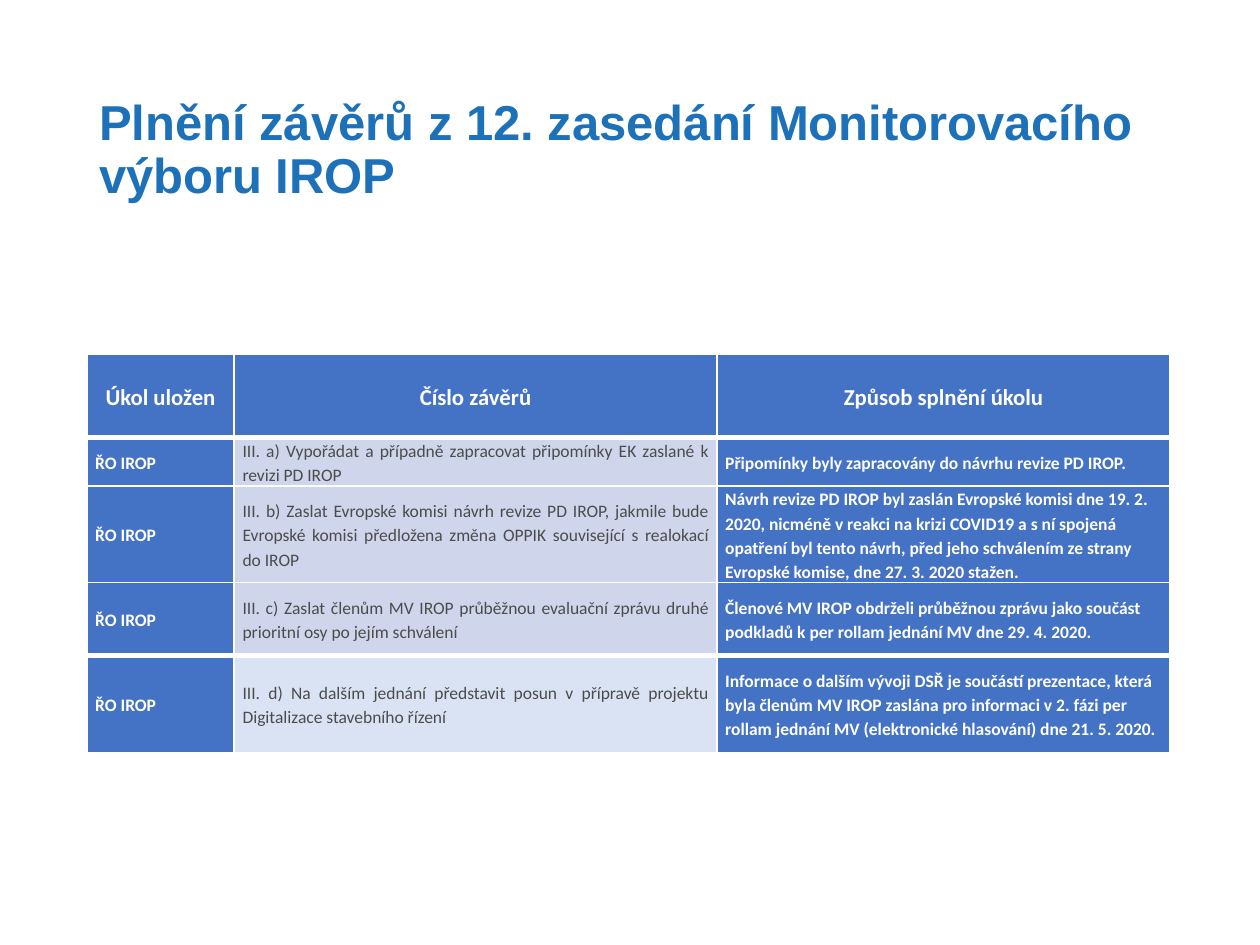
from dataclasses import dataclass

from lxml import etree
from pptx import Presentation
from pptx.dml.color import RGBColor
from pptx.enum.text import MSO_ANCHOR, PP_ALIGN
from pptx.oxml.ns import qn
from pptx.table import _Cell
from pptx.text.text import TextFrame
from pptx.util import Cm, Pt

MIDDLE = MSO_ANCHOR.MIDDLE
LEFT, CENTER, JUSTIFY = PP_ALIGN.LEFT, PP_ALIGN.CENTER, PP_ALIGN.JUSTIFY


@dataclass(frozen=True)
class Theme:
    title_color: str = "1D71B8"
    accent: str = "4472C4"
    band: str = "CFD5EA"
    last_band: str = "DAE3F3"
    white: str = "FFFFFF"
    gray: str = "4C4C4C"
    title_font: str = "Arial"
    table_font: str = "Calibri"
    title_size: int = 28
    header_size: int = 13
    body_size: int = 10
    thin: int = 1
    thick: int = 3


@dataclass(frozen=True)
class Task:
    owner: str
    conclusion: str
    fulfilment: str
    height: float


THEME = Theme()
TITLE = "Plnění závěrů z 12. zasedání Monitorovacího výboru IROP"
HEADERS = ("Úkol uložen", "Číslo závěrů", "Způsob splnění úkolu")
COLUMN_WIDTHS = (2.97, 9.73, 9.14)
HEADER_HEIGHT = 1.67
TASKS = (
    Task(
        "ŘO IROP",
        "III. a) Vypořádat a případně zapracovat připomínky EK zaslané k revizi PD IROP",
        "Připomínky byly zapracovány do návrhu revize PD IROP.",
        0.97,
    ),
    Task(
        "ŘO IROP",
        "III. b) Zaslat Evropské komisi návrh revize PD IROP, jakmile bude Evropské komisi "
        "předložena změna OPPIK související s realokací do IROP",
        "Návrh revize PD IROP byl zaslán Evropské komisi dne 19. 2. 2020, nicméně v reakci na "
        "krizi COVID19 a s ní spojená opatření byl tento návrh, před jeho schválením ze strany "
        "Evropské komise, dne 27. 3. 2020 stažen.",
        1.95,
    ),
    Task(
        "ŘO IROP",
        "III. c) Zaslat členům MV IROP průběžnou evaluační zprávu druhé prioritní osy "
        "po jejím schválení",
        "Členové MV IROP obdrželi průběžnou zprávu jako součást podkladů k per rollam jednání "
        "MV dne 29. 4. 2020.",
        1.47,
    ),
    Task(
        "ŘO IROP",
        "III. d) Na dalším jednání představit posun v přípravě projektu Digitalizace "
        "stavebního řízení",
        "Informace o dalším vývoji DSŘ je součástí prezentace, která byla členům MV IROP "
        "zaslána pro informaci v 2. fázi per rollam jednání MV (elektronické hlasování) "
        "dne 21. 5. 2020.",
        1.95,
    ),
)


def write_text(frame: TextFrame, text: str, *, font: str, size: int, color: str,
               bold: bool, align: PP_ALIGN, spacing: float) -> None:
    frame.word_wrap = True
    para = frame.paragraphs[0]
    para.alignment = align
    para.line_spacing = spacing
    span = para.add_run()
    span.text = text
    span.font.name = font
    span.font.size = Pt(size)
    span.font.bold = bold
    span.font.color.rgb = RGBColor.from_string(color)


def set_borders(cell: _Cell, top: int, bottom: int) -> None:
    properties = cell._tc.get_or_add_tcPr()
    widths = {"a:lnL": THEME.thin, "a:lnR": THEME.thin, "a:lnT": top, "a:lnB": bottom}
    for position, (tag, width) in enumerate(widths.items()):
        line = etree.Element(qn(tag), w=str(Pt(width)))
        fill = etree.SubElement(line, qn("a:solidFill"))
        etree.SubElement(fill, qn("a:srgbClr"), val=THEME.white)
        properties.insert(position, line)


def fill_cell(cell: _Cell, text: str, *, fill: str, align: PP_ALIGN,
              size: int = THEME.body_size, color: str = THEME.white, bold: bool = True,
              top: int = THEME.thin, bottom: int = THEME.thin) -> None:
    cell.vertical_anchor = MIDDLE
    cell.margin_left = cell.margin_right = Cm(0.17)
    cell.margin_top = cell.margin_bottom = Cm(0)
    cell.fill.solid()
    cell.fill.fore_color.rgb = RGBColor.from_string(fill)
    set_borders(cell, top, bottom)
    write_text(cell.text_frame, text, font=THEME.table_font, size=size, color=color,
               bold=bold, align=align, spacing=1.15)


def add_title(page) -> None:
    box = page.shapes.add_textbox(Cm(1.75), Cm(1.02), Cm(21.84), Cm(4.06))
    box.text_frame.vertical_anchor = MIDDLE
    write_text(box.text_frame, TITLE, font=THEME.title_font, size=THEME.title_size,
               color=THEME.title_color, bold=True, align=LEFT, spacing=0.9)


def add_task_table(page) -> None:
    heights = (HEADER_HEIGHT, *(task.height for task in TASKS))
    table = page.shapes.add_table(
        len(heights), len(COLUMN_WIDTHS), Cm(1.75), Cm(7.15),
        Cm(sum(COLUMN_WIDTHS)), Cm(sum(heights))).table
    table.horz_banding = False
    for column, width in zip(table.columns, COLUMN_WIDTHS):
        column.width = Cm(width)
    for row, height in zip(table.rows, heights):
        row.height = Cm(height)

    for cell, header in zip(table.rows[0].cells, HEADERS):
        fill_cell(cell, header, fill=THEME.accent, align=CENTER,
                  size=THEME.header_size, bottom=THEME.thick)

    last = len(TASKS)
    for number, task in enumerate(TASKS, start=1):
        owner, conclusion, fulfilment = table.rows[number].cells
        edges = {
            "top": THEME.thick if number in (1, last) else THEME.thin,
            "bottom": THEME.thick if number == last - 1 else THEME.thin,
        }
        band = THEME.last_band if number == last else THEME.band
        fill_cell(owner, task.owner, fill=THEME.accent, align=JUSTIFY, **edges)
        fill_cell(conclusion, task.conclusion, fill=band, align=JUSTIFY,
                  color=THEME.gray, bold=False, **edges)
        fill_cell(fulfilment, task.fulfilment, fill=THEME.accent, align=LEFT, **edges)


def main() -> None:
    deck = Presentation()
    deck.slide_width, deck.slide_height = Cm(25.4), Cm(19.05)
    page = deck.slides.add_slide(deck.slide_layouts[6])
    add_title(page)
    add_task_table(page)
    deck.save("out.pptx")


if __name__ == "__main__":
    main()
